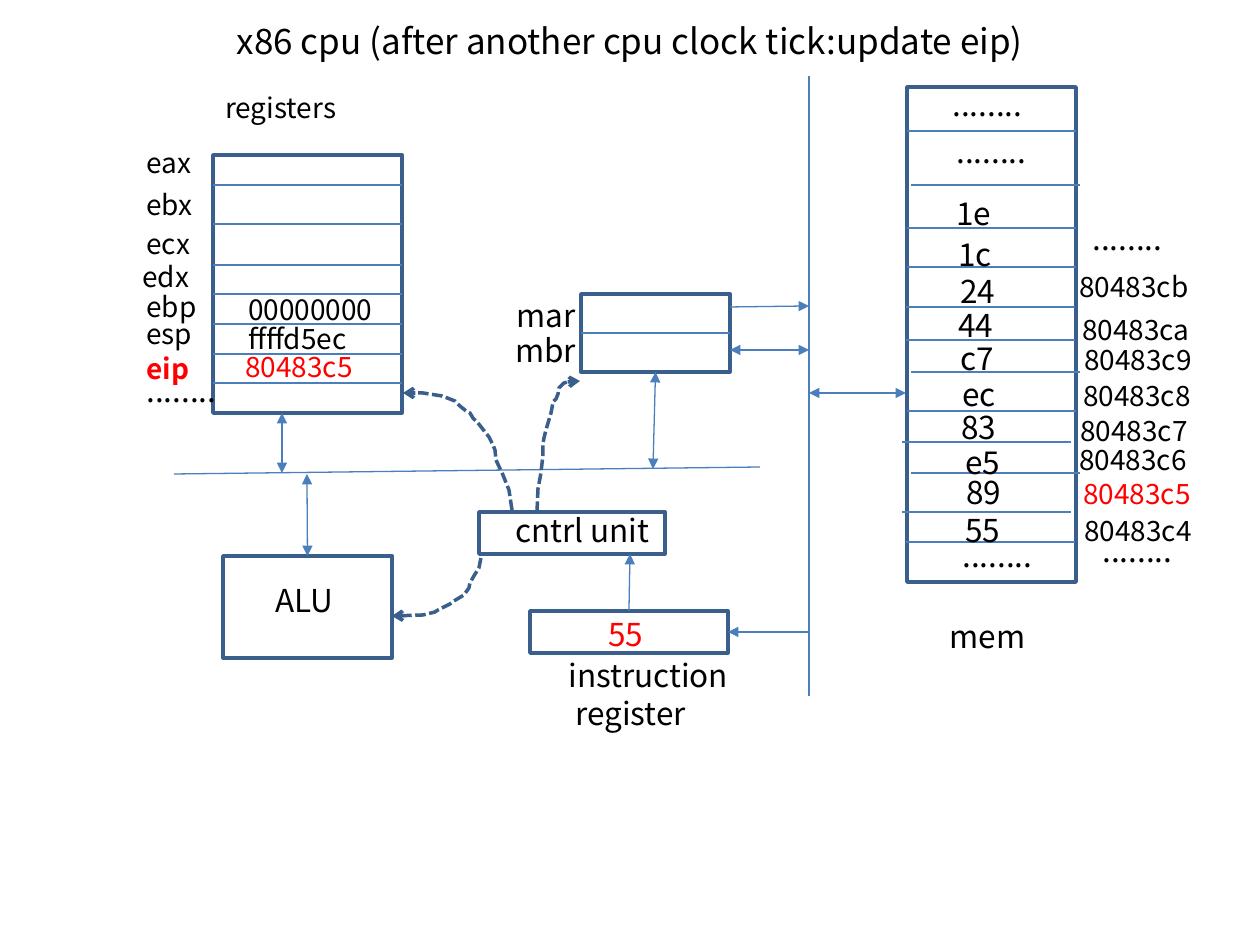
from dataclasses import dataclass

from lxml import etree
from pptx import Presentation
from pptx.dml.color import RGBColor
from pptx.enum import dml, shapes, text
from pptx.oxml import ns
from pptx.util import Pt

PX = 914400 / 126  # EMU in one px


@dataclass(frozen=True)
class Theme:
    font: str = "Noto Sans CJK KR"
    ink: str = "000000"
    active: str = "FF0000"
    paper: str = "FFFFFF"
    outline: str = "3A5F8C"
    wire: str = "4B7EBC"
    title: int = 20
    body: int = 18
    small: int = 16
    thick: float = 2
    thin: float = 0.75


THEME = Theme()
DOTS = "........"


def emu(*lengths):
    return [round(length * PX) for length in lengths]


def rgb(code):
    return RGBColor.from_string(code)


def label(slide, words, left, top, width, size=THEME.body, color=THEME.ink,
          bold=False, height=50):
    box = slide.shapes.add_textbox(*emu(left, top, width, height))
    frame = box.text_frame
    frame.word_wrap = True
    frame.text = words
    for paragraph in frame.paragraphs:
        for run in paragraph.runs:
            run.font.name = THEME.font
            run.font.size = Pt(size)
            run.font.color.rgb = rgb(color)
            run.font.bold = bold
    return frame


def block(slide, box):
    rect = slide.shapes.add_shape(shapes.MSO_SHAPE.RECTANGLE, *emu(*box))
    rect.shadow.inherit = False
    rect.fill.solid()
    rect.fill.fore_color.rgb = rgb(THEME.paper)
    rect.line.color.rgb = rgb(THEME.outline)
    rect.line.width = Pt(THEME.thick)
    return rect


def add_heads(shape, head, tail):
    line = shape.line._get_or_add_ln()
    for tag, kind in (("a:headEnd", head), ("a:tailEnd", tail)):
        if kind:
            etree.SubElement(line, ns.qn(tag)).set("type", kind)


def wire(slide, start, end, head=None, tail=None, begin=None, finish=None):
    """Draw a line; begin and finish are (shape, side) pairs to join."""
    line = slide.shapes.add_connector(shapes.MSO_CONNECTOR.STRAIGHT,
                                      *emu(*start, *end))
    if begin:
        line.begin_connect(*begin)
    if finish:
        line.end_connect(*finish)
    line.line.color.rgb = rgb(THEME.wire)
    line.line.width = Pt(THEME.thin)
    add_heads(line, head, tail)
    etree.SubElement(line._element.spPr, ns.qn("a:effectLst"))


def control_path(slide, points):
    builder = slide.shapes.build_freeform(*points[0], scale=PX)
    builder.add_line_segments(points[1:], close=False)
    path = builder.convert_to_shape()
    path.shadow.inherit = False
    path.fill.background()
    path.line.color.rgb = rgb(THEME.outline)
    path.line.width = Pt(THEME.thick)
    path.line.dash_style = dml.MSO_LINE.SQUARE_DOT
    add_heads(path, None, "arrow")


def title(slide, box):
    left, top, width, height = box
    frame = label(slide, "x86 cpu (after another cpu clock tick:update eip)",
                  left, top, width, THEME.title, height=height)
    frame.vertical_anchor = text.MSO_ANCHOR.MIDDLE
    frame.paragraphs[0].alignment = text.PP_ALIGN.CENTER


def registers(slide, box):
    left, top, width, _ = box
    block(slide, box)
    for y in (30, 69, 110, 139, 169, 199, 228):
        wire(slide, (left, top + y), (left + width, top + y))
    label(slide, "registers", left, top - 71, 149, THEME.small)
    # Register names
    for name, x, y in (("eax", -79, -16), ("ebx", -79, 26), ("ecx", -79, 65),
                       ("edx", -83, 98), ("ebp", -79, 128), ("esp", -79, 155)):
        label(slide, name, left + x, top + y, 100, THEME.small)
    label(slide, "eip", left - 79, top + 190, 100, THEME.small, THEME.active, True)
    label(slide, DOTS, left - 79, top + 210, 100)
    # Register values
    for value, x, y, color in (("00000000", 23, 131, THEME.ink),
                               ("ffffd5ec", 23, 160, THEME.ink),
                               ("80483c5", 20, 188, THEME.active)):
        label(slide, value, left + x, top + y, 155, THEME.small, color)


def memory(slide, box):
    left, top, width, _ = box
    block(slide, box)
    for x, y in ((0, 44), (4, 98), (0, 141), (0, 180), (-1, 220), (-1, 253),
                 (4, 285), (0, 324), (-5, 355), (4, 386), (-5, 425), (-1, 455)):
        wire(slide, (left + x, top + y), (left + x + width, top + y))
    label(slide, "mem", left + 30, top + 524, 134)
    # Stored bytes
    for byte, x, y in ((DOTS, 33, -8), (DOTS, 37, 39), ("1e", 37, 101),
                       ("1c", 39, 142), ("24", 41, 179), ("44", 39, 213),
                       ("c7", 41, 246), ("ec", 43, 282), ("83", 42, 315),
                       ("e5", 46, 350), ("89", 47, 380), ("55", 46, 418),
                       (DOTS, 43, 443)):
        label(slide, byte, left + x, top + y, 100 if byte == DOTS else 69)
    # Addresses
    for x, y in ((173, 126), (183, 438)):
        label(slide, DOTS, left + x, top + y, 100)
    for digit, x, y in (("b", 160, 176), ("a", 163, 219), ("9", 165, 249),
                        ("8", 164, 285), ("7", 161, 320), ("6", 160, 349),
                        ("5", 164, 383), ("4", 165, 420)):
        color = THEME.active if digit == "5" else THEME.ink
        label(slide, "80483c" + digit, left + x, top + y, 149, THEME.small, color)


def memory_interface(slide, box):
    left, top, width, height = box
    buffers = block(slide, box)
    middle = top + height // 2
    wire(slide, (left, middle), (left + width, middle),
         begin=(buffers, 1), finish=(buffers, 3))
    label(slide, "mar", left - 77, top - 4, 100)
    label(slide, "mbr", left - 78, top + 31, 100)
    return buffers


def alu(slide, box):
    unit = block(slide, box)
    label(slide, "ALU", box[0] + 40, box[1] + 19, 100)
    return unit


def control_unit(slide, box):
    block(slide, box)
    label(slide, "cntrl unit", box[0] + 24, box[1] - 7, 165)


def instruction_register(slide, box):
    left, top = box[:2]
    holder = block(slide, box)
    label(slide, "55", left + 66, top - 2, 69, color=THEME.active)
    label(slide, "instruction\n register", left + 26, top + 39, 198, height=89)
    return holder


def buses(slide, box, alu_unit, buffers, instruction):
    left, top, width, height = box
    right = left + width
    both = {"head": "triangle", "tail": "triangle"}
    wire(slide, (left, 474), (760, 467))
    wire(slide, (right, top), (right, top + height))
    # Links to the internal bus
    wire(slide, (282, 413), (282, 473), **both)
    wire(slide, (307, 474), (307, 556), finish=(alu_unit, 0), **both)
    wire(slide, (655, 372), (653, 469), begin=(buffers, 2), **both)
    # Links to the memory bus
    wire(slide, (730, 307), (right, 306), tail="triangle")
    wire(slide, (730, 350), (right, 350), **both)
    wire(slide, (right, 393), (906, 393), **both)
    wire(slide, (right, 632), (728, 632), tail="triangle", finish=(instruction, 3))
    # Instruction to control unit
    wire(slide, (629, 611), (630, 554), tail="triangle", begin=(instruction, 0))


def control_signals(slide, box):
    left, top = box[:2]
    to_alu = ((89, 177), (87, 187), (82, 195), (78, 202), (77, 207), (72, 214),
              (62, 220), (58, 223), (52, 226), (46, 229), (43, 231), (31, 234),
              (0, 235))
    to_registers = ((120, 129), (117, 109), (111, 94), (104, 79), (103, 69),
                    (101, 64), (97, 56), (86, 42), (81, 37), (78, 32), (74, 30),
                    (68, 25), (63, 20), (50, 15), (31, 12), (11, 12))
    to_mar = ((145, 131), (146, 108), (149, 92), (151, 74), (151, 63), (152, 57),
              (154, 49), (159, 32), (160, 27), (161, 21), (164, 18), (166, 13),
              (167, 7), (172, 2), (179, 0), (188, 0))
    for route in (to_alu, to_registers, to_mar):
        control_path(slide, [(left + x, top + y) for x, y in route])


def main():
    deck = Presentation()
    deck.slide_width, deck.slide_height = emu(1260, 945)
    slide = deck.slides.add_slide(deck.slide_layouts[6])
    title(slide, (63, -8, 1134, 97))
    registers(slide, (213, 155, 189, 258))
    memory(slide, (907, 87, 169, 495))
    alu_unit = alu(slide, (223, 556, 169, 102))
    buffers = memory_interface(slide, (581, 294, 149, 78))
    control_unit(slide, (479, 512, 186, 42))
    instruction = instruction_register(slide, (530, 611, 198, 42))
    buses(slide, (174, 76, 635, 620), alu_unit, buffers, instruction)
    control_signals(slide, (392, 381, 188, 235))
    deck.save("out.pptx")


if __name__ == "__main__":
    main()
